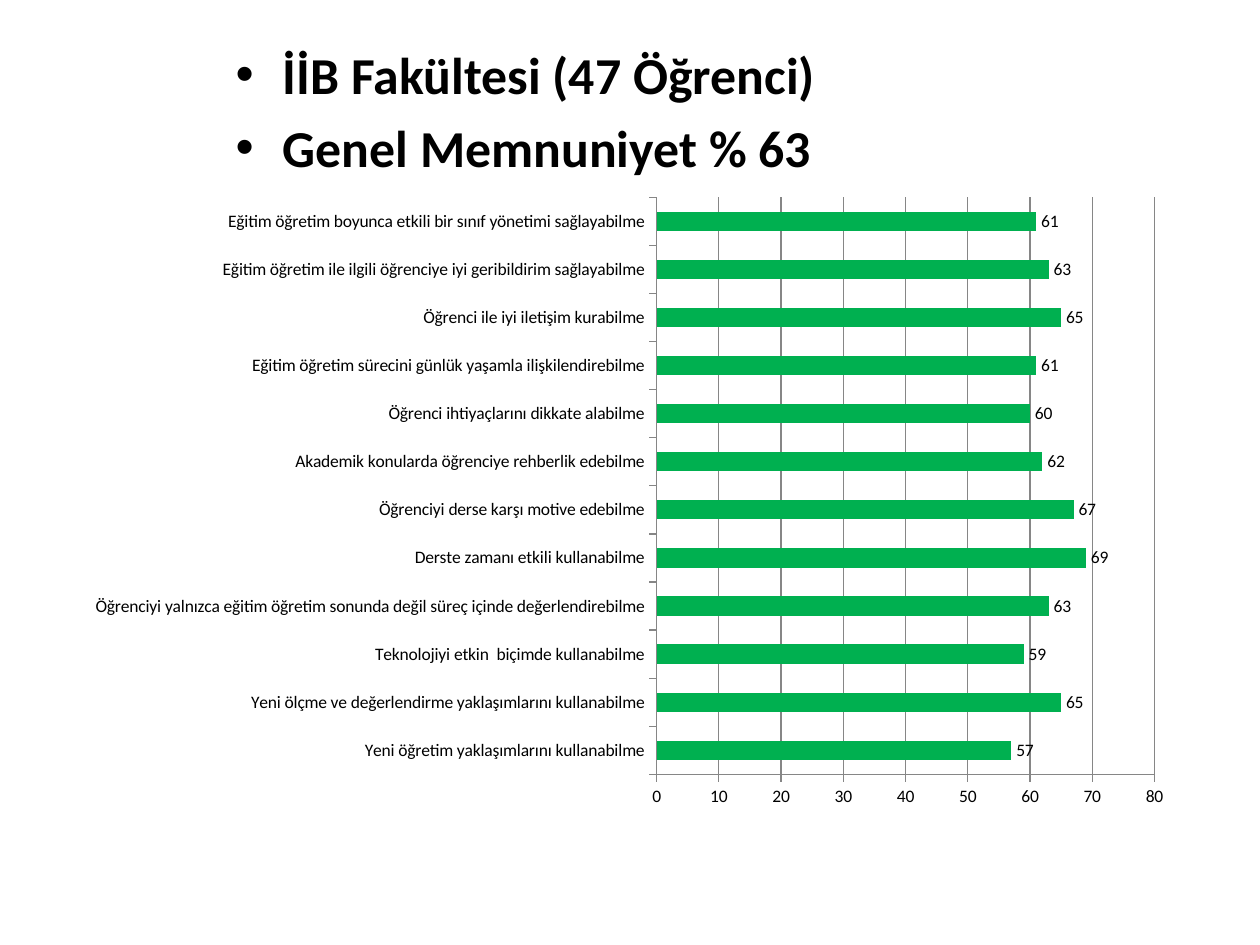
from lxml import etree
from pptx import Presentation
from pptx.chart.data import CategoryChartData
from pptx.dml.color import RGBColor
from pptx.enum.chart import XL_CHART_TYPE as ChartType, XL_LABEL_POSITION as LabelPos
from pptx.enum.chart import XL_TICK_MARK as TickMark
from pptx.enum.text import MSO_ANCHOR as Anchor
from pptx.oxml import parse_xml
from pptx.oxml.ns import nsdecls, qn
from pptx.util import Inches, Pt

BLACK = RGBColor(0x00, 0x00, 0x00)
GREEN = RGBColor(0x00, 0xB0, 0x50)
GRAY = RGBColor(0x86, 0x86, 0x86)
FONT = "Calibri"

HEADINGS = ["İİB Fakültesi (47 Öğrenci)", "Genel Memnuniyet % 63"]

# Satisfaction per item, from the bottom bar to the top one
SCORES = [
    ("Yeni öğretim yaklaşımlarını kullanabilme", 57),
    ("Yeni ölçme ve değerlendirme yaklaşımlarını kullanabilme", 65),
    ("Teknolojiyi etkin  biçimde kullanabilme", 59),
    ("Öğrenciyi yalnızca eğitim öğretim sonunda değil süreç içinde değerlendirebilme", 63),
    ("Derste zamanı etkili kullanabilme", 69),
    ("Öğrenciyi derse karşı motive edebilme", 67),
    ("Akademik konularda öğrenciye rehberlik edebilme", 62),
    ("Öğrenci ihtiyaçlarını dikkate alabilme", 60),
    ("Eğitim öğretim sürecini günlük yaşamla ilişkilendirebilme", 61),
    ("Öğrenci ile iyi iletişim kurabilme", 65),
    ("Eğitim öğretim ile ilgili öğrenciye iyi geribildirim sağlayabilme", 63),
    ("Eğitim öğretim boyunca etkili bir sınıf yönetimi sağlayabilme", 61),
]


def set_font(font, size, bold=False):
    font.name, font.size, font.bold = FONT, Pt(size), bold
    font.color.rgb = BLACK


def fill_headings(body):
    """Write the bulleted headings into the body placeholder."""
    body.left, body.top = Inches(1.77), Inches(0.29)
    body.width, body.height = Inches(6.54), Inches(1.18)
    tf = body.text_frame
    tf.text = "\n".join(HEADINGS)
    tf.vertical_anchor = Anchor.TOP
    for p in tf.paragraphs:
        set_font(p.font, 29.6, bold=True)


def style_axis(axis):
    axis.major_tick_mark = TickMark.OUTSIDE
    axis.minor_tick_mark = TickMark.NONE
    axis.format.line.color.rgb = GRAY
    axis.format.line.width = Pt(0.75)


def place_plot(chart, x, y, w, h):
    """Fix the inner plot area, in fractions of the chart."""
    plot_area = chart.plots[0]._element.getparent()
    for old in plot_area.findall(qn("c:layout")):
        plot_area.remove(old)
    layout = parse_xml(f"<c:layout {nsdecls('c')}><c:manualLayout/></c:layout>")
    settings = [("layoutTarget", "inner"), ("xMode", "edge"), ("yMode", "edge"),
                ("x", x), ("y", y), ("w", w), ("h", h)]
    for tag, val in settings:
        etree.SubElement(layout[0], qn(f"c:{tag}")).set("val", str(val))
    plot_area.insert(0, layout)


def add_score_chart(slide):
    data = CategoryChartData(number_format="0")
    data.categories = [name for name, _ in SCORES]
    data.add_series("Series 1", [score for _, score in SCORES])
    chart = slide.shapes.add_chart(
        ChartType.BAR_CLUSTERED, Inches(0.59), Inches(1.47),
        Inches(8.82), Inches(5.04), data).chart
    chart.has_title = chart.has_legend = False
    set_font(chart.font, 10)

    # Axes
    style_axis(chart.category_axis)
    value_axis = chart.value_axis
    style_axis(value_axis)
    value_axis.minimum_scale, value_axis.maximum_scale = 0, 80
    value_axis.major_unit = 10
    value_axis.tick_labels.number_format = "0"
    value_axis.tick_labels.number_format_is_linked = False
    value_axis.has_major_gridlines = True
    value_axis.major_gridlines.format.line.color.rgb = GRAY
    value_axis.major_gridlines.format.line.width = Pt(0.75)

    # Bars and their labels
    plot = chart.plots[0]
    plot.vary_by_categories = False
    plot.gap_width = 150
    fill = plot.series[0].format.fill
    fill.solid()
    fill.fore_color.rgb = GREEN
    plot.has_data_labels = True
    labels = plot.data_labels
    labels.show_value = True
    labels.number_format, labels.number_format_is_linked = "0", False
    labels.position = LabelPos.OUTSIDE_END
    set_font(labels.font, 10)
    place_plot(chart, 0.524, 0.019, 0.448, 0.909)


def main():
    prs = Presentation()
    prs.slide_width, prs.slide_height = Inches(10), Inches(7.5)
    slide = prs.slides.add_slide(prs.slide_layouts[1])
    title = slide.shapes.title._element
    title.getparent().remove(title)
    fill_headings(slide.placeholders[1])
    add_score_chart(slide)
    prs.save("out.pptx")


if __name__ == "__main__":
    main()
